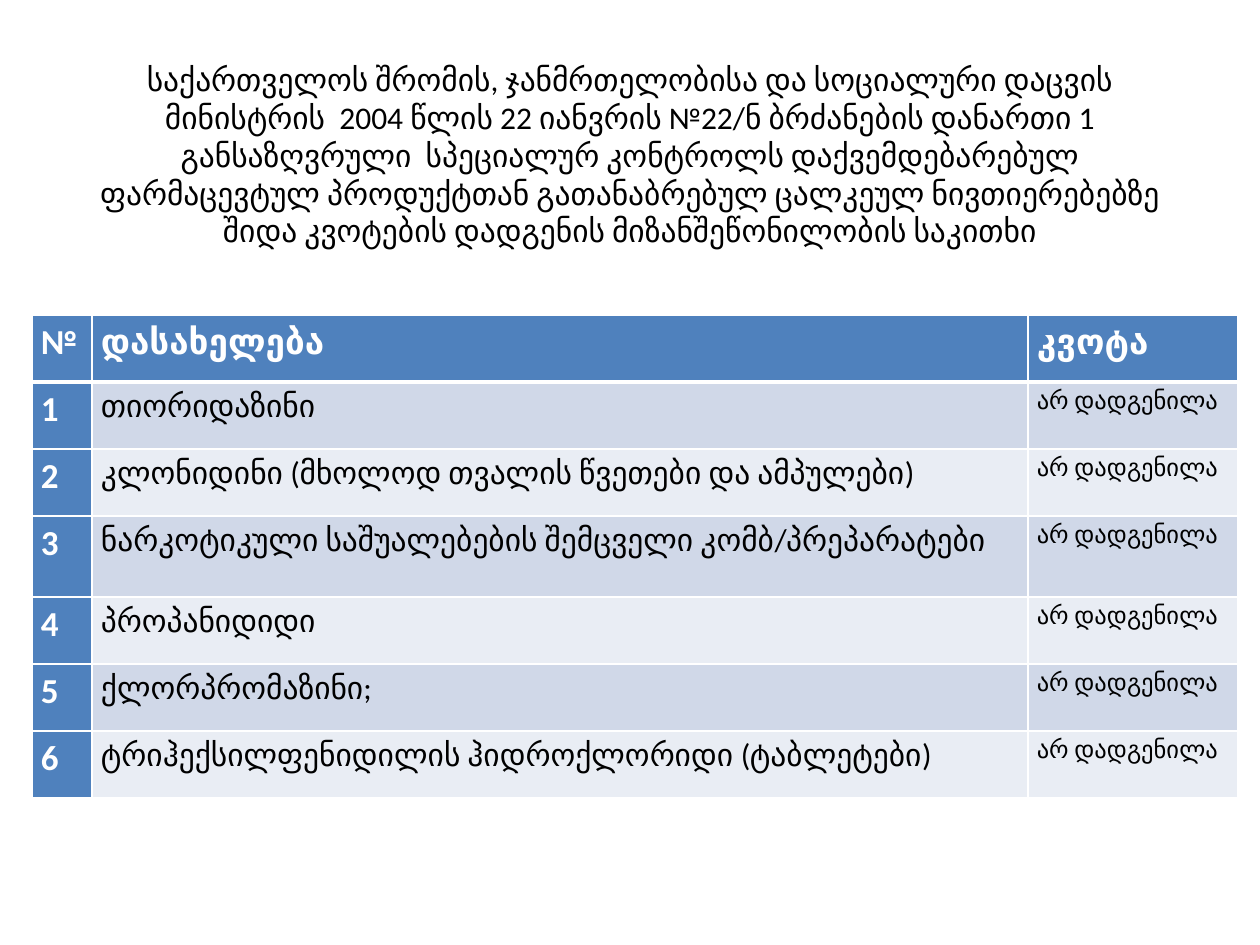
"""Build a slide with a table of substances and their internal quotas."""
from lxml.etree import SubElement
from pptx import Presentation
from pptx.dml.color import RGBColor
from pptx.enum.text import MSO_ANCHOR, PP_ALIGN
from pptx.oxml.ns import qn
from pptx.util import Pt

PX = 7257.6
FONT = "Calibri"
BLACK = RGBColor(0x00, 0x00, 0x00)
WHITE = RGBColor(0xFF, 0xFF, 0xFF)
BLUE = RGBColor(0x4F, 0x81, 0xBD)
BANDS = (RGBColor(0xE9, 0xED, 0xF4), RGBColor(0xD0, 0xD8, 0xE8))

TITLE = (
    "საქართველოს შრომის, ჯანმრთელობისა და სოციალური დაცვის მინისტრის  2004 წლის "
    "22 იანვრის №22/ნ ბრძანების დანართი 1 განსაზღვრული  სპეციალურ კონტროლს "
    "დაქვემდებარებულ ფარმაცევტულ პროდუქტთან გათანაბრებულ ცალკეულ ნივთიერებებზე "
    "შიდა კვოტების დადგენის მიზანშეწონილობის საკითხი"
)
HEADER = ("№", "დასახელება", "კვოტა")
SUBSTANCES = [
    "თიორიდაზინი",
    "კლონიდინი (მხოლოდ თვალის წვეთები და ამპულები)",
    "ნარკოტიკული საშუალებების შემცველი კომბ/პრეპარატები",
    "პროპანიდიდი",
    "ქლორპრომაზინი;",
    "ტრიჰექსილფენიდილის ჰიდროქლორიდი (ტაბლეტები)",
]
QUOTA = "არ დადგენილა"
COLUMN_WIDTHS = (60, 936, 210)
ROW_HEIGHTS = (67, 67, 67, 81, 67, 67, 67)
BODY_SIZES = (20, 18, 14)


def px(length):
    return round(length * PX)


def place(shape, left, top, width, height):
    shape.left, shape.top = px(left), px(top)
    shape.width, shape.height = px(width), px(height)


def set_font(paragraph, size, color, bold=False):
    font = paragraph.font
    font.name, font.size, font.bold = FONT, Pt(size), bold
    font.color.rgb = color


def add_borders(cell, bottom_width):
    properties = cell._tc.get_or_add_tcPr()
    for side, width in (("L", 1), ("R", 1), ("T", 1), ("B", bottom_width)):
        line = SubElement(properties, qn(f"a:ln{side}"), w=str(Pt(width)))
        fill = SubElement(line, qn("a:solidFill"))
        SubElement(fill, qn("a:srgbClr"), val=str(WHITE))


def format_cell(cell, text, row, column):
    is_header = row == 0
    is_heading = is_header or column == 0
    cell.margin_left = cell.margin_right = px(9)
    cell.margin_top = cell.margin_bottom = 0
    add_borders(cell, 3 if is_header else 1)
    cell.fill.solid()
    cell.fill.fore_color.rgb = BLUE if is_heading else BANDS[row % 2]
    cell.text = text
    paragraph = cell.text_frame.paragraphs[0]
    paragraph.line_spacing = 1.15
    is_name = column == 1 and not is_header
    paragraph.alignment = PP_ALIGN.LEFT if is_name else PP_ALIGN.JUSTIFY
    size = 20 if is_header else BODY_SIZES[column]
    set_font(paragraph, size, WHITE if is_heading else BLACK, is_heading)


def add_title(page):
    title = page.shapes.title
    place(title, 63, 38, 1134, 271)
    frame = title.text_frame
    frame.text = TITLE
    frame.word_wrap = True
    frame.vertical_anchor = MSO_ANCHOR.MIDDLE
    frame.margin_bottom = px(44)
    paragraph = frame.paragraphs[0]
    paragraph.alignment = PP_ALIGN.CENTER
    set_font(paragraph, 18, BLACK)


def add_quota_table(page):
    rows = [HEADER]
    rows += [(str(number), name, QUOTA) for number, name in enumerate(SUBSTANCES, 1)]
    table = page.shapes.add_table(
        len(rows), len(HEADER), px(32), px(315),
        px(sum(COLUMN_WIDTHS)), px(sum(ROW_HEIGHTS)),
    ).table
    table.first_col = True
    for column, width in zip(table.columns, COLUMN_WIDTHS):
        column.width = px(width)
    for row, height in zip(table.rows, ROW_HEIGHTS):
        row.height = px(height)
    for row, texts in enumerate(rows):
        for column, text in enumerate(texts):
            format_cell(table.cell(row, column), text, row, column)


def main():
    deck = Presentation()
    deck.slide_width, deck.slide_height = px(1260), px(945)
    page = deck.slides.add_slide(deck.slide_layouts[5])
    add_title(page)
    add_quota_table(page)
    deck.save("out.pptx")


if __name__ == "__main__":
    main()
